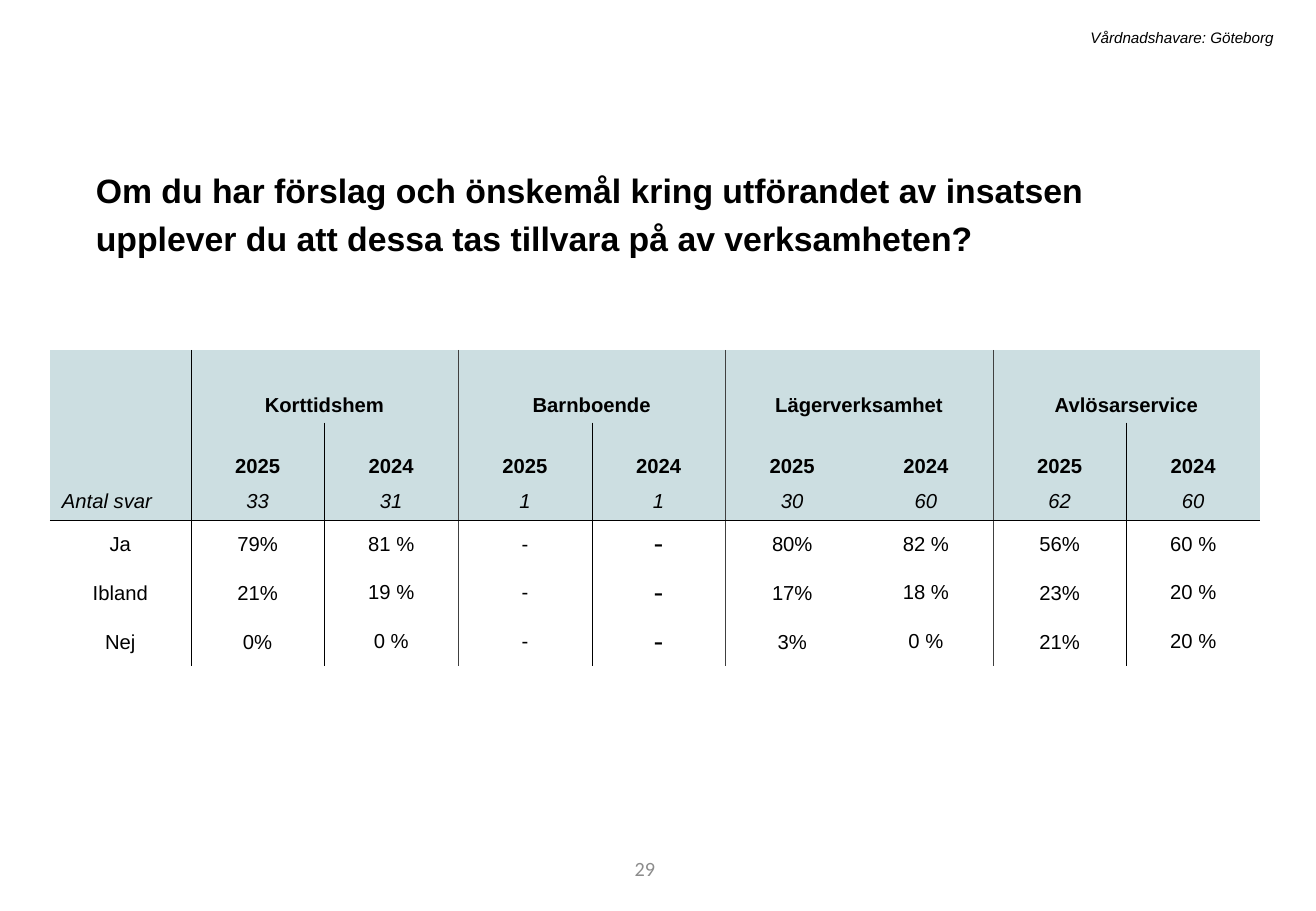
import pptx
import pptx.util
import pptx.dml.color
import pptx.enum.text
import pptx.oxml
import pptx.oxml.ns

Inches = pptx.util.Inches
Pt = pptx.util.Pt
Align = pptx.enum.text.PP_ALIGN
Anchor = pptx.enum.text.MSO_ANCHOR


def color(code):
    return pptx.dml.color.RGBColor.from_string(code)


def write(frame, text, align, look, code="000000"):
    para = frame.paragraphs[0]
    para.alignment = align
    run = para.add_run()
    run.text = text
    for key, value in look.items():
        setattr(run.font, key, value)
    run.font.color.rgb = color(code)
    return para


deck = pptx.Presentation()
deck.slide_width, deck.slide_height = Inches(10.83), Inches(7.5)
slide = deck.slides.add_slide(deck.slide_layouts[6])

# Page number, title and header
page = {"name": "Calibri", "size": Pt(12)}
title = {"name": "Arial", "size": Pt(20), "bold": True}
note = {"name": "Arial", "size": Pt(9), "italic": True}
texts = [
    ((3.05, 6.95, 2.44, 0.4), "29", Align.RIGHT, page, "8C8C8C", Anchor.MIDDLE),
    ((0.69, 1.28, 9.4, 0.87),
     "Om du har förslag och önskemål kring utförandet av insatsen "
     "upplever du att dessa tas tillvara på av verksamheten?",
     Align.LEFT, title, "000000", Anchor.TOP),
    ((1.72, 0.18, 8.86, 0.25), "Vårdnadshavare: Göteborg",
     Align.RIGHT, note, "000000", Anchor.TOP),
]
for area, text, align, look, code, anchor in texts:
    frame = slide.shapes.add_textbox(*map(Inches, area)).text_frame
    frame.word_wrap = True
    frame.vertical_anchor = anchor
    para = write(frame, text, align, look, code)
    if look is title:
        para.line_spacing = 1.2
        para.space_before = Pt(10)

# Table content
rows = [
    ["", "Korttidshem", "", "Barnboende", "", "Lägerverksamhet", "", "Avlösarservice", ""],
    [""] + ["2025", "2024"] * 4,
    ["Antal svar", "33", "31", "1", "1", "30", "60", "62", "60"],
    ["Ja", "79%", "81 %", "-", "-", "80%", "82 %", "56%", "60 %"],
    ["Ibland", "21%", "19 %", "-", "-", "17%", "18 %", "23%", "20 %"],
    ["Nej", "0%", "0 %", "-", "-", "3%", "0 %", "21%", "20 %"],
]
heights = [0.6, 0.5, 0.3, 0.4, 0.4, 0.4]
widths = [1.16] + [1.1] * 8

# Rules on the right of each column, as colour and width
black, gray = ("000000", 0.25), ("404040", 0.25)
rules = {0: black, 1: black, 2: ("404040", 0.5), 3: black,
         4: gray, 6: gray, 7: black}

table = slide.shapes.add_table(
    len(rows), len(widths), Inches(0.41), Inches(2.88),
    Inches(sum(widths)), Inches(sum(heights))).table
table.first_row = table.horz_banding = False
style = table._tbl.tblPr.find(pptx.oxml.ns.qn("a:tableStyleId"))
style.text = "{2D5ABB26-0587-4C30-8999-92F81FD0307C}"
for col, width in zip(table.columns, widths):
    col.width = Inches(width)
for row, height in zip(table.rows, heights):
    row.height = Inches(height)
for c in range(1, 9, 2):
    table.cell(0, c).merge(table.cell(0, c + 1))

# Table cells
for r, row in enumerate(rows):
    for c, text in enumerate(row):
        cell = table.cell(r, c)
        if cell.is_spanned:
            continue
        if r < 3:
            cell.fill.solid()
            cell.fill.fore_color.rgb = color("CCDEE1")
        else:
            cell.fill.background()
        cell.vertical_anchor = Anchor.BOTTOM if r < 2 else Anchor.MIDDLE
        if r > 2 and c in (0, 1, 5, 7):
            cell.margin_left = cell.margin_top = cell.margin_right = Inches(0.01)
            cell.margin_bottom = 0
        if text:
            dash = r > 2 and c == 4
            look = {"name": "Calibri" if dash else "Arial",
                    "size": Pt(18 if dash else 12),
                    "bold": r < 2 or dash, "italic": r == 2}
            look["bold"] = r < 2
            align = Align.LEFT if text == "Antal svar" else Align.CENTER
            write(cell.text_frame, text, align, look)

        # Cell borders
        last = c + 1 if cell.is_merge_origin else c
        edges = [("lnL", rules.get(c - 1)), ("lnR", rules.get(last)),
                 ("lnT", black if r == 3 else None),
                 ("lnB", black if r == 2 else None)]
        props = cell._tc.get_or_add_tcPr()
        for spot, (tag, rule) in enumerate(edges):
            paint, size = "<a:noFill/>", 0
            if rule:
                paint = f'<a:solidFill><a:srgbClr val="{rule[0]}"/></a:solidFill>'
                size = Pt(rule[1])
            props.insert(spot, pptx.oxml.parse_xml(
                f'<a:{tag} {pptx.oxml.ns.nsdecls("a")} w="{size}">{paint}</a:{tag}>'))

deck.save("out.pptx")
